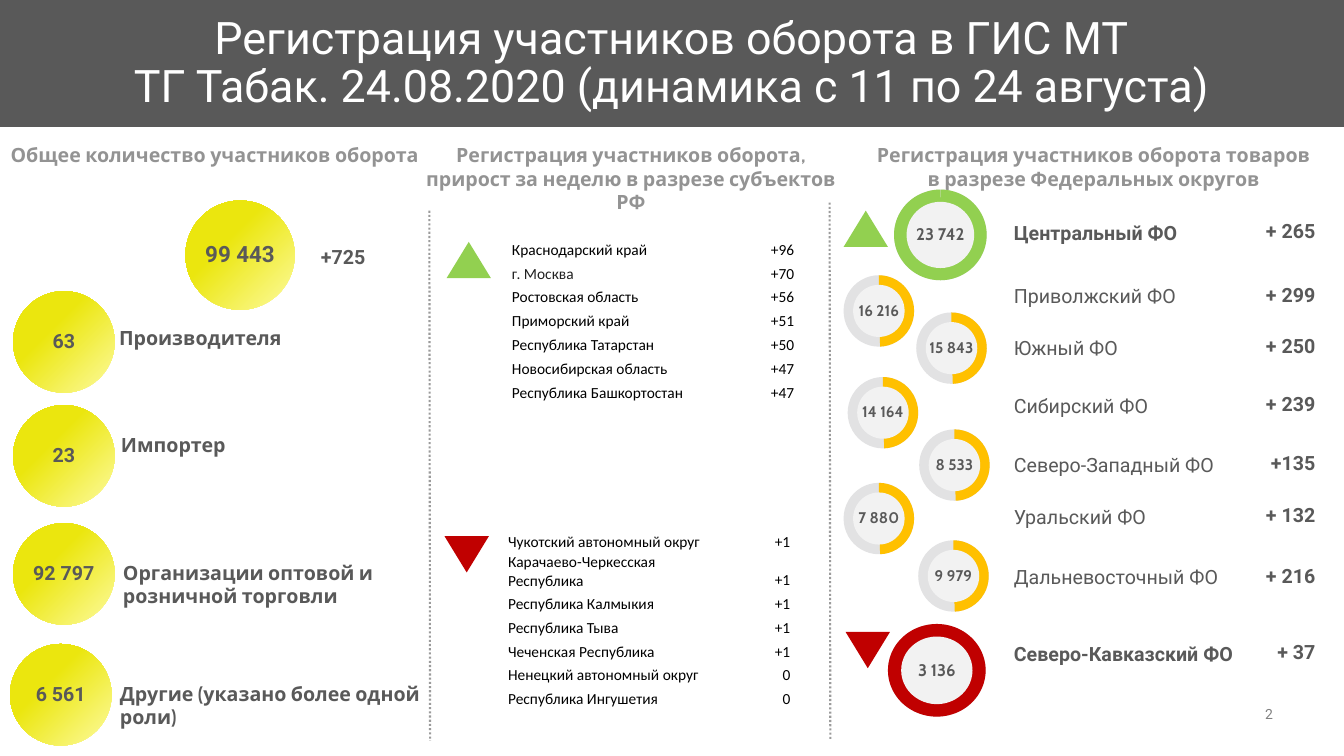
from lxml.etree import SubElement
from pptx import Presentation
from pptx.dml.color import RGBColor
from pptx.enum.dml import MSO_LINE
from pptx.enum.shapes import MSO_CONNECTOR, MSO_SHAPE
from pptx.enum.text import MSO_ANCHOR, PP_ALIGN
from pptx.oxml.ns import qn
from pptx.util import Pt

HUES = {
    "text": "595959", "head": "939393", "rule": "9B9B9B", "page": "808080",
    "white": "FFFFFF", "black": "000000", "soft": "212121",
    "pale": "FDFB9F", "lemon": "EBE60E", "ring": "E2E2E3", "disc": "F2F2F2",
    "green": "92D050", "red": "C00000", "amber": "FFC000",
}
LEFT, MID, RIGHT = PP_ALIGN.LEFT, PP_ALIGN.CENTER, PP_ALIGN.RIGHT
TOP, BASE = MSO_ANCHOR.TOP, MSO_ANCHOR.BOTTOM
INSET = (7.2, 3.6, 7.2, 3.6)
NONE = (0, 0, 0, 0)


def hue(name):
    return RGBColor.from_string(HUES[name])


class Board:
    """Holds the slide and the style shared by its elements."""

    def __init__(self, slide):
        self.slide = slide
        self.shapes = slide.shapes

    def fill(self, frame, lines, size, font, tone="text", bold=False,
             align=LEFT, space=None):
        """Put each line in its own paragraph; a line may be a list of
        runs that are parted by line breaks."""
        for i, line in enumerate(lines):
            para = frame.paragraphs[0] if i == 0 else frame.add_paragraph()
            para.alignment = align
            if space:
                para.line_spacing = space
            for j, part in enumerate([line] if isinstance(line, str) else line):
                if j:
                    para.add_line_break()
                run = para.add_run()
                run.text = part
                run.font.size = Pt(size)
                run.font.name = font
                run.font.bold = bold
                run.font.color.rgb = hue(tone)

    def frame(self, frame, inset, anchor, wrap=True):
        left, top, right, low = inset
        frame.margin_left, frame.margin_top = Pt(left), Pt(top)
        frame.margin_right, frame.margin_bottom = Pt(right), Pt(low)
        frame.vertical_anchor = anchor
        frame.word_wrap = wrap

    def text(self, x, y, w, h, lines, size=14, font="Roboto", inset=INSET,
             anchor=TOP, **style):
        box = self.shapes.add_textbox(Pt(x), Pt(y), Pt(w), Pt(h))
        self.frame(box.text_frame, inset, anchor)
        self.fill(box.text_frame, lines, size, font, **style)

    def shape(self, kind, x, y, w, h, tone=None, root=None):
        item = (root or self.shapes).add_shape(kind, Pt(x), Pt(y), Pt(w), Pt(h))
        item.shadow.inherit = False
        item.line.fill.background()
        if tone:
            item.fill.solid()
            item.fill.fore_color.rgb = hue(tone)
        return item

    def count(self, item, value, size, font):
        """Set a bold number in the middle of a round shape."""
        self.frame(item.text_frame, (7.2,) * 4, MSO_ANCHOR.MIDDLE, False)
        self.fill(item.text_frame, [value], size, font, bold=True,
                  align=MID, space=0.95)

    def ball(self, x, y, size, value, points=14):
        item = self.shape(MSO_SHAPE.OVAL, x, y, size, size)
        item.fill.gradient()
        item.fill.gradient_angle = 135
        stops = item.fill.gradient_stops
        for stop, tone, place in zip(stops, ("pale", "lemon"), (0, 0.63)):
            stop.color.rgb = hue(tone)
            stop.position = place
        self.count(item, value, points, "Roboto")

    def donut(self, x, y, w, h, tone, end, value, size):
        root = self.shapes.add_group_shape().shapes
        self.shape(MSO_SHAPE.OVAL, x, y, w, h, "ring", root)
        arc = self.shape(MSO_SHAPE.ARC, x, y, w, h, tone, root)
        arc.adjustments[0] = 162
        arc.adjustments[1] = end
        part = 0.73
        gap = (1 - part) / 2
        disc = self.shape(MSO_SHAPE.OVAL, x + w * gap, y + h * gap,
                          w * part, h * part, "disc", root)
        self.count(disc, value, size, "Cabin")

    def sign(self, x, y, up):
        """Draw a triangle: green and up, or red and down."""
        item = self.shape(MSO_SHAPE.ISOSCELES_TRIANGLE, x, y, 31.7, 25.9,
                          "green" if up else "red")
        item.rotation = 0 if up else 180

    def rule(self, x, y, low):
        line = self.shapes.add_connector(
            MSO_CONNECTOR.STRAIGHT, Pt(x), Pt(y), Pt(x + 0.5), Pt(low))
        line.line.color.rgb = hue("rule")
        line.line.width = Pt(1.5)
        line.line.dash_style = MSO_LINE.ROUND_DOT
        SubElement(line._element.spPr, qn("a:effectLst"))

    def table(self, x, y, rows, tall=None):
        """Place a two-column table; row number `tall` holds two lines."""
        highs = [27 if i == tall else 17 for i in range(len(rows))]
        grid = self.shapes.add_table(len(rows), 2, Pt(x), Pt(y), Pt(203),
                                     Pt(sum(highs))).table
        grid.first_row = grid.horz_banding = False
        for col, wide in zip(grid.columns, (158.4, 44.6)):
            col.width = Pt(wide)
        for i, row in enumerate(rows):
            grid.rows[i].height = Pt(highs[i])
            for j, value in enumerate(row):
                cell = grid.cell(i, j)
                cell.fill.background()
                cell.margin_left = cell.margin_right = cell.margin_top = Pt(0.7)
                cell.margin_bottom = Pt(0)
                cell.vertical_anchor = BASE
                tone = "soft" if value == "г. Москва" else "black"
                self.fill(cell.text_frame, [value], 11, "Calibri", tone,
                          align=RIGHT if j else LEFT)


HEADS = [
    (-10, ["Общее количество участников оборота"]),
    (287.3, ["Регистрация участников оборота,",
             "прирост за неделю в разрезе субъектов РФ"]),
    (617.8, ["Регистрация участников оборота товаров "
             "в разрезе Федеральных округов"]),
]
# ball x, y, count, label x, y, height, text
ROLES = [
    (9.4, 208, "63", 85, 232.6, 17.3, "Производителя"),
    (9.4, 289.4, "23", 86.4, 308.9, 17.3, "Импортер"),
    (9.4, 373.7, "92 797", 87.8, 400.3, 33.8,
     "Организации оптовой и розничной торговли"),
    (7.2, 460, "6 561", 85.7, 486.7, 33.8, "Другие (указано более одной роли)"),
]
GAINS = [
    ("Краснодарский край", "+96"), ("г. Москва", "+70"),
    ("Ростовская область", "+56"), ("Приморский край", "+51"),
    ("Республика Татарстан", "+50"), ("Новосибирская область", "+47"),
    ("Республика Башкортостан", "+47"),
]
LOWS = [
    ("Чукотский автономный округ", "+1"),
    ("Карачаево-Черкесская Республика", "+1"),
    ("Республика Калмыкия", "+1"), ("Республика Тыва", "+1"),
    ("Чеченская Республика", "+1"), ("Ненецкий автономный округ", "0"),
    ("Республика Ингушетия", "0"),
]
# text y, name, growth, count, donut x, y
AREAS = [
    (154, "Центральный ФО", "+ 265", "23 742", 638.6, 135.4),
    (199.4, "Приволжский ФО", "+ 299", "16 216", 602.6, 196.6),
    (236.2, "Южный ФО", "+ 250", "15 843", 654.5, 223.2),
    (277.9, "Сибирский ФО", "+ 239", "14 164", 605.5, 269.3),
    (319.7, "Северо-Западный ФО", "+135", "8 533", 656.6, 306.7),
    (357.1, "Уральский ФО", "+ 132", "7 880", 602.6, 344.9),
    (400.3, "Дальневосточный ФО", "+ 216", "9 979", 655.9, 385.9),
    (455, "Северо-Кавказский ФО", "+ 37", "3 136", 634.3, 445.7),
]
# donut width, height, colour, arc end, text size
RINGS = {
    "Центральный ФО": (66.2, 64.8, "green", 161.69, 12),
    "Северо-Кавказский ФО": (69.8, 66.2, "red", 161.84, 12),
}
PLAIN = (50.4, 51, "amber", 52.75, 11)


def main():
    deck = Presentation()
    deck.slide_width, deck.slide_height = Pt(960), Pt(540)
    board = Board(deck.slides.add_slide(deck.slide_layouts[6]))

    band = board.shape(MSO_SHAPE.RECTANGLE, 0, 0, 960, 90.7, "text")
    band.line.color.rgb = hue("text")
    band.line.width = Pt(0.75)
    board.text(49.7, 10.8, 860.4, 69.8,
               [["Регистрация участников оборота в ГИС МТ",
                 "ТГ Табак. 24.08.2020 (динамика с 11 по 24 августа)"]],
               32, inset=NONE, anchor=MSO_ANCHOR.MIDDLE, tone="white",
               align=MID, space=0.9)
    board.text(879, 504, 30.2, 12.2, ["2"], 10, inset=NONE, anchor=BASE,
               tone="page", align=RIGHT)
    for x, lines in HEADS:
        board.text(x, 98.6, 319.7, 35.3, lines, font="Cabin",
                   inset=(7.2, 3.6, 0, 3.6), tone="head", bold=True, align=MID)
    board.rule(306.7, 150.5, 529.2)
    board.rule(592.6, 144.7, 529.2)

    board.ball(132.5, 143.3, 78, "99 443", 16)
    board.text(200.9, 172.8, 88.6, 23, ["+725"], bold=True, align=MID, space=0.95)
    for x, y, value, left, top, high, label in ROLES:
        board.ball(x, y, 72.5, value)
        board.text(left, top, 216.7, high, [label], font="Cabin", inset=NONE,
                   anchor=BASE, bold=True)

    board.sign(319, 172.8, True)
    board.table(365, 168.5, GAINS)
    board.sign(317.5, 383, False)
    board.table(362.2, 377.3, LOWS, tall=1)

    board.sign(602.6, 150.5, True)
    board.sign(604, 451.4, False)
    for y, name, growth, value, x, top in AREAS:
        w, h, tone, end, size = RINGS.get(name, PLAIN)
        board.donut(x, top, w, h, tone, end, value, size)
        board.text(717.1, y, 200.9, 24.5, [name], bold=name in RINGS)
        board.text(879, y, 67.7, 23, [growth], bold=True, align=RIGHT, space=0.95)

    deck.save("out.pptx")


if __name__ == "__main__":
    main()
